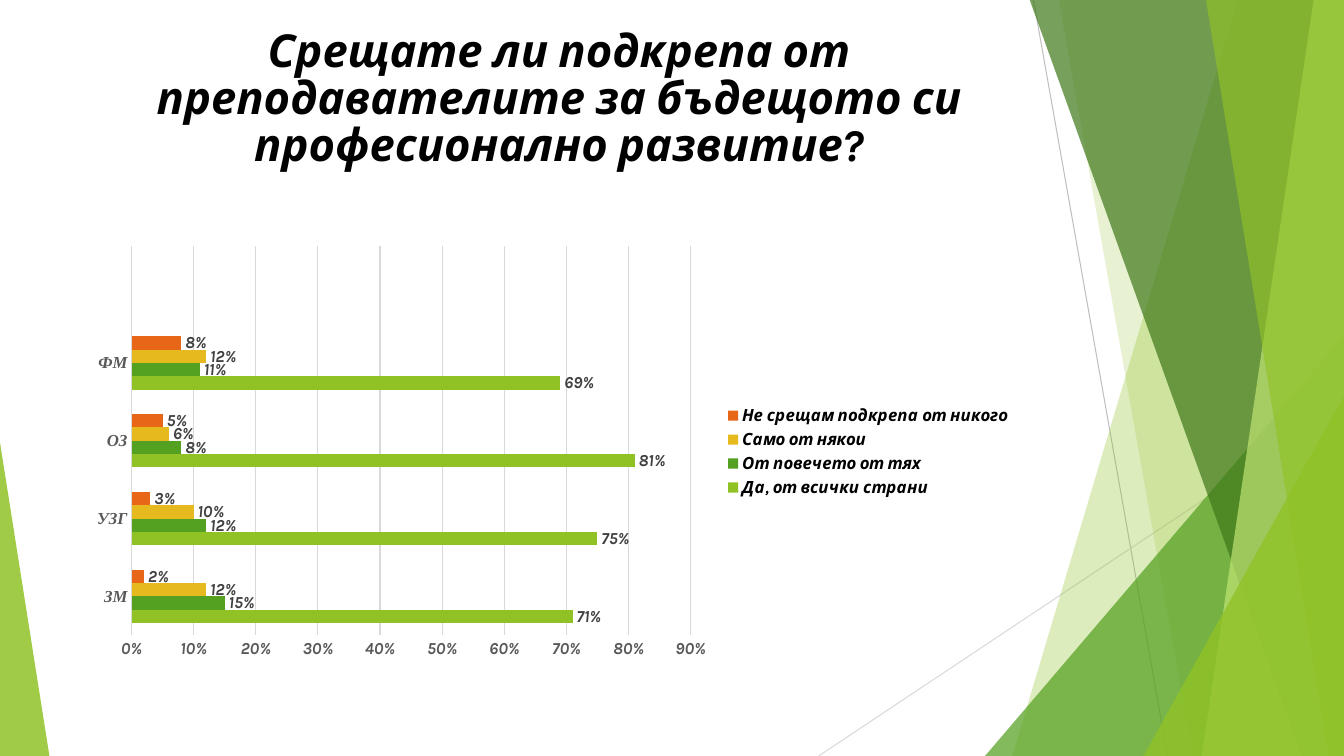
"""Build a slide with a clustered bar chart on support from teachers."""
import pptx
import pptx.chart.data
import pptx.dml.color
import pptx.enum.chart
import pptx.enum.shapes
import pptx.enum.text
import pptx.oxml.ns
import pptx.oxml.xmlchemy
import pptx.util

Inches = pptx.util.Inches
qn = pptx.oxml.ns.qn
new_element = pptx.oxml.xmlchemy.OxmlElement

QUESTION = "Срещате ли подкрепа от преподавателите за бъдещото си професионално развитие?"
FACULTIES = ["ЗМ", "УЗГ", "ОЗ", "ФМ", ""]
ANSWERS = [
    ("Да, от всички страни", [0.71, 0.75, 0.81, 0.69, None], "lime"),
    ("От повечето от тях", [0.15, 0.12, 0.08, 0.11, None], "green"),
    ("Само от някои", [0.12, 0.10, 0.06, 0.12, None], "yellow"),
    ("Не срещам подкрепа от никого", [0.02, 0.03, 0.05, 0.08, None], "orange"),
]
THEME = {
    "lime": "90C226", "green": "54A021", "yellow": "E6B91E", "orange": "E76618",
    "forest": "3F7819", "pale": "C0E474", "ink": "000000", "axis": "595959",
    "label": "404040", "grid": "D9D9D9", "ray": "BFBFBF",
    "font": "Karla", "category_font": "Times New Roman",
    "title_size": 32.4, "chart_size": 12, "hairline": 0.75,
}
WIDTH, HEIGHT, BLEED = 13.33, 7.5, -0.01
TITLE_BOX = (0.95, 0.18, 9.19, 1.62)
CHART_BOX = (0.74, 2.36, 9.4, 4.24)
PLOT_SHARE = {"x": 0.06, "y": 0.02, "w": 0.59, "h": 0.91}
RAYS = [((10.25, 0), (11.58, HEIGHT), "ray"), ((WIDTH, 4.03), (8.12, HEIGHT), "grid")]
FACETS = [
    ("band", (12.28, 10.04), "lime", 30),
    ("band", (10.5, 11.83), "lime", 20),
    ("triangle", (9.77, 3.33, 3.56, 1), "green", 72),
    ("band", (10.21, 12.91), "forest", 70),
    ("band", (13.03, 11.92), "pale", 70),
    ("band", (11.96, 13.18), "lime", 65),
    ("triangle", (11.34, 3.93, 1.99, 1), "lime", 80),
    ("triangle", (0, 4.39, 0.49, 0), "lime", 85),
]


def colour(name):
    return pptx.dml.color.RGBColor.from_string(THEME[name])


def apply(target, values):
    for attribute, value in values.items():
        setattr(target, attribute, value)


def style_font(font, ink, size="chart_size", face="font"):
    apply(font, {"name": THEME[face], "size": pptx.util.Pt(THEME[size]),
                 "bold": True, "italic": True})
    font.color.rgb = colour(ink)


def style_line(line, ink):
    line.color.rgb = colour(ink)
    line.width = pptx.util.Pt(THEME["hairline"])


def add_ray(shapes, start, end, ink):
    ray = shapes.add_connector(pptx.enum.shapes.MSO_CONNECTOR.STRAIGHT,
                               *map(Inches, start + end))
    style_line(ray.line, ink)
    ray._element.spPr.append(new_element("a:effectLst"))


def add_facet(shapes, kind, geometry, ink, opacity):
    if kind == "band":
        top, bottom = geometry
        corners = [(WIDTH, BLEED), (WIDTH, HEIGHT), (bottom, HEIGHT)]
        outline = shapes.build_freeform(Inches(top), Inches(BLEED))
        outline.add_line_segments([(Inches(x), Inches(y)) for x, y in corners])
        facet = outline.convert_to_shape()
    else:
        left, top, width, apex = geometry
        facet = shapes.add_shape(pptx.enum.shapes.MSO_SHAPE.ISOSCELES_TRIANGLE,
                                 *map(Inches, (left, top, width, HEIGHT - top)))
        facet.adjustments[0] = apex
    facet.shadow.inherit = False
    facet.fill.solid()
    facet.fill.fore_color.rgb = colour(ink)
    facet.line.fill.background()
    alpha = new_element("a:alpha")
    alpha.set("val", str(opacity * 1000))
    facet._element.spPr.find(".//" + qn("a:srgbClr")).append(alpha)


def place_title(slide):
    title = slide.shapes.title
    slide.shapes._spTree.append(title._element)
    apply(title, dict(zip(("left", "top", "width", "height"), map(Inches, TITLE_BOX))))
    frame = title.text_frame
    frame.text = QUESTION
    apply(frame, {"word_wrap": True, "auto_size": pptx.enum.text.MSO_AUTO_SIZE.NONE,
                  "vertical_anchor": pptx.enum.text.MSO_ANCHOR.TOP,
                  "margin_top": Inches(0.11)})
    apply(frame.paragraphs[0], {"alignment": pptx.enum.text.PP_ALIGN.CENTER,
                                "line_spacing": 0.87})
    style_font(frame.paragraphs[0].runs[0].font, "ink", "title_size")


def fix_plot_area(chart):
    plot_area = chart._chartSpace.chart.plotArea
    for old in plot_area.findall(qn("c:layout")):
        plot_area.remove(old)
    layout = new_element("c:layout")
    manual = new_element("c:manualLayout")
    settings = {"layoutTarget": "inner", "xMode": "edge", "yMode": "edge", **PLOT_SHARE}
    for tag, value in settings.items():
        setting = new_element("c:" + tag)
        setting.set("val", str(value))
        manual.append(setting)
    layout.append(manual)
    plot_area.insert(0, layout)


def add_answers_chart(shapes):
    enums = pptx.enum.chart
    data = pptx.chart.data.CategoryChartData(number_format="0%")
    data.categories = FACULTIES
    for answer, shares, _ in ANSWERS:
        data.add_series(answer, shares)
    chart = shapes.add_chart(enums.XL_CHART_TYPE.BAR_CLUSTERED,
                             *map(Inches, CHART_BOX), data).chart
    apply(chart, {"has_title": False, "has_legend": True})
    style_font(chart.font, "ink")
    apply(chart.legend, {"position": enums.XL_LEGEND_POSITION.RIGHT,
                         "include_in_layout": False})
    style_font(chart.legend.font, "ink")

    plot = chart.plots[0]
    apply(plot, {"gap_width": 182, "vary_by_categories": False})
    for series, (_, _, ink) in zip(plot.series, ANSWERS):
        series.format.fill.solid()
        series.format.fill.fore_color.rgb = colour(ink)
        series.invert_if_negative = False
        labels = series.data_labels
        apply(labels, {"show_value": True, "number_format": "0%",
                       "number_format_is_linked": False,
                       "position": enums.XL_LABEL_POSITION.OUTSIDE_END})
        style_font(labels.font, "label")

    for axis, face in ((chart.category_axis, "category_font"), (chart.value_axis, "font")):
        apply(axis, {"major_tick_mark": enums.XL_TICK_MARK.NONE,
                     "minor_tick_mark": enums.XL_TICK_MARK.NONE})
        style_font(axis.tick_labels.font, "axis", face=face)
    style_line(chart.category_axis.format.line, "grid")
    shares_axis = chart.value_axis
    apply(shares_axis, {"minimum_scale": 0, "maximum_scale": 0.9, "major_unit": 0.1,
                        "has_major_gridlines": True})
    apply(shares_axis.tick_labels, {"number_format": "0%", "number_format_is_linked": False})
    shares_axis.format.line.fill.background()
    style_line(shares_axis.major_gridlines.format.line, "grid")
    fix_plot_area(chart)


def main():
    deck = pptx.Presentation()
    apply(deck, {"slide_width": Inches(WIDTH), "slide_height": Inches(HEIGHT)})
    slide = deck.slides.add_slide(deck.slide_layouts[5])
    for ray in RAYS:
        add_ray(slide.shapes, *ray)
    for facet in FACETS:
        add_facet(slide.shapes, *facet)
    place_title(slide)
    add_answers_chart(slide.shapes)
    deck.save("out.pptx")


if __name__ == "__main__":
    main()
